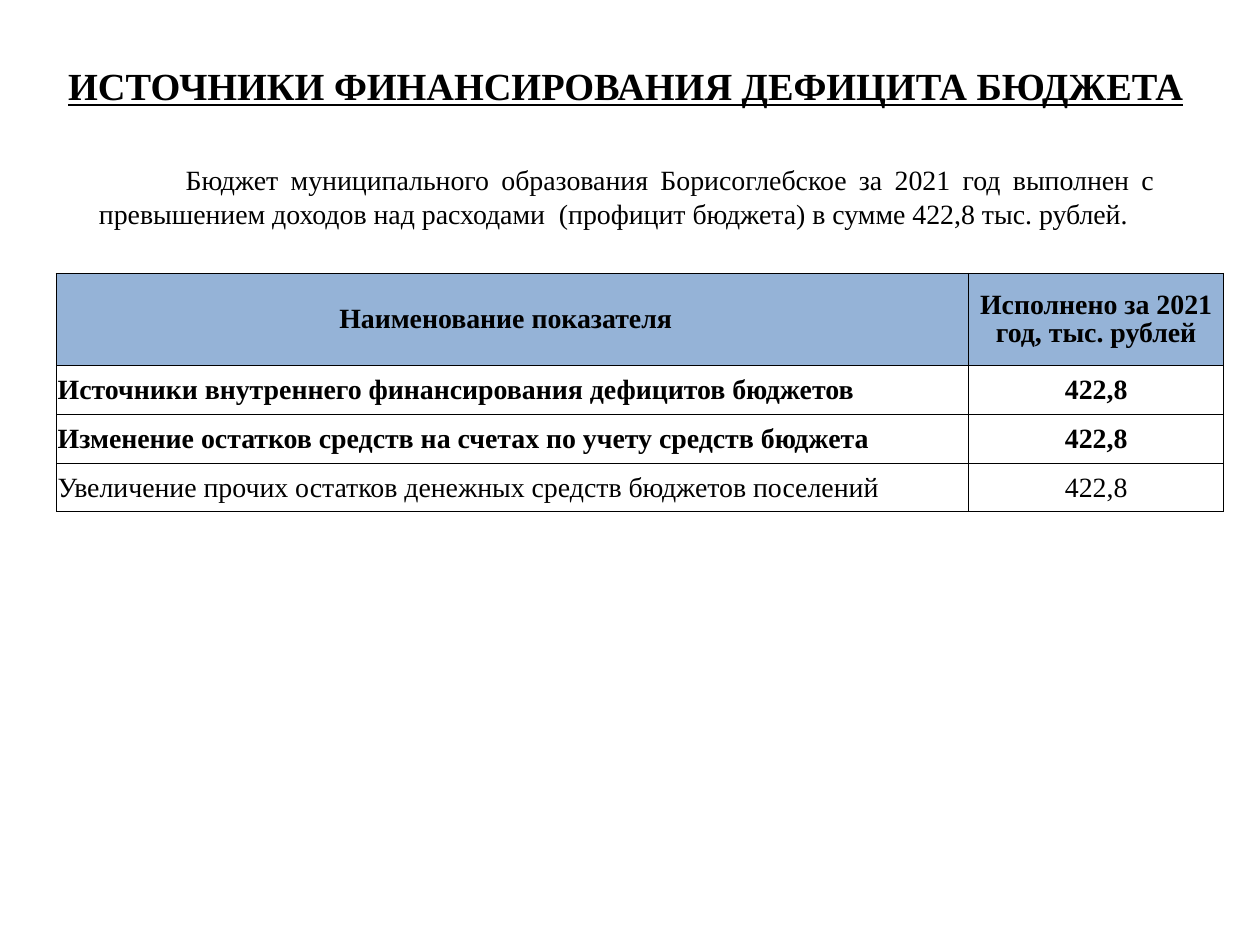
from lxml.etree import SubElement
from pptx import Presentation
from pptx.dml.color import RGBColor
from pptx.enum.text import MSO_ANCHOR, PP_ALIGN
from pptx.oxml.ns import qn
from pptx.util import Inches, Pt

COLORS = {"text": "000000", "border": "000000", "header": "95B3D7", "page": "FFFFFF"}
FONT = "Times New Roman"
COLUMNS = [7.27, 2.03]
HEADER_HEIGHT, ROW_HEIGHT = 0.73, 0.39
HEADINGS = ["Наименование показателя", "Исполнено за 2021 год, тыс. рублей"]
INDICATORS = [
    ("Источники внутреннего финансирования дефицитов бюджетов", "422,8", True),
    ("Изменение остатков средств на счетах по учету средств бюджета", "422,8", True),
    ("Увеличение прочих остатков денежных средств бюджетов поселений", "422,8", False),
]


class BudgetPage:
    def __init__(self, deck):
        self.page = deck.slides.add_slide(deck.slide_layouts[6])
        self.page.background.fill.solid()
        self.page.background.fill.fore_color.rgb = RGBColor.from_string(COLORS["page"])

    def paragraph(self, frame, text, size=16, bold=False, underline=False,
                  align=PP_ALIGN.CENTER):
        para = frame.paragraphs[0]
        para.alignment = align
        span = para.add_run()
        span.text = text
        span.font.name = FONT
        span.font.size = Pt(size)
        span.font.bold = bold
        span.font.underline = underline
        span.font.color.rgb = RGBColor.from_string(COLORS["text"])
        return para

    def text(self, left, top, width, height, text, anchor=MSO_ANCHOR.TOP, indent=0, **style):
        box = self.page.shapes.add_textbox(
            Inches(left), Inches(top), Inches(width), Inches(height))
        frame = box.text_frame
        frame.word_wrap = True
        frame.vertical_anchor = anchor
        para = self.paragraph(frame, text, **style)
        if indent:
            properties = para._p.get_or_add_pPr()
            properties.set("marL", "0")
            properties.set("indent", str(Inches(indent)))

    def border(self, cell, side, width):
        line = SubElement(cell._tc.get_or_add_tcPr(), qn(f"a:ln{side}"), w=str(Pt(width)))
        fill = SubElement(line, qn("a:solidFill"))
        SubElement(fill, qn("a:srgbClr"), val=COLORS["border"])

    def cell(self, cell, text, widths, bold, align, fill=None, right=0.01):
        cell.margin_left = cell.margin_top = Inches(0.01)
        cell.margin_right = Inches(right)
        cell.margin_bottom = 0
        cell.vertical_anchor = MSO_ANCHOR.MIDDLE
        for side, width in zip("LRTB", widths):
            self.border(cell, side, width)
        if fill:
            cell.fill.solid()
            cell.fill.fore_color.rgb = RGBColor.from_string(COLORS[fill])
        else:
            cell.fill.background()
        return self.paragraph(cell.text_frame, text, bold=bold, align=align)

    def table(self, left, top):
        heights = [HEADER_HEIGHT] + [ROW_HEIGHT] * len(INDICATORS)
        table = self.page.shapes.add_table(
            len(heights), len(COLUMNS), Inches(left), Inches(top),
            Inches(sum(COLUMNS)), Inches(sum(heights))).table
        for column, width in zip(table.columns, COLUMNS):
            column.width = Inches(width)
        for row, height in zip(table.rows, heights):
            row.height = Inches(height)
        header_borders = [(1, 0.5, 1, 0.5), (0.5, 1, 1, 0.5)]
        for index, (heading, widths, right) in enumerate(
                zip(HEADINGS, header_borders, (0.12, 0.01))):
            para = self.cell(table.cell(0, index), heading, widths, True,
                             PP_ALIGN.CENTER, "header", right)
            para.line_spacing = 0.93
        for row, (name, amount, bold) in enumerate(INDICATORS, 1):
            widths = [0.5] * 4
            self.cell(table.cell(row, 0), name, widths, bold, PP_ALIGN.JUSTIFY)
            self.cell(table.cell(row, 1), amount, widths, bold, PP_ALIGN.CENTER)


def main():
    deck = Presentation()
    deck.slide_width, deck.slide_height = Inches(10.04), Inches(7.5)
    page = BudgetPage(deck)
    page.text(0.14, 0.21, 9.69, 0.94, "ИСТОЧНИКИ ФИНАНСИРОВАНИЯ ДЕФИЦИТА БЮДЖЕТА",
              anchor=MSO_ANCHOR.MIDDLE, size=22, bold=True, underline=True)
    page.text(0.69, 1.25, 8.61, 1,
              "Бюджет муниципального образования Борисоглебское за 2021 год выполнен "
              "с превышением доходов над расходами  (профицит бюджета) в сумме "
              "422,8 тыс. рублей.", indent=0.69, align=PP_ALIGN.JUSTIFY)
    page.table(0.45, 2.18)
    deck.save("out.pptx")


if __name__ == "__main__":
    main()
